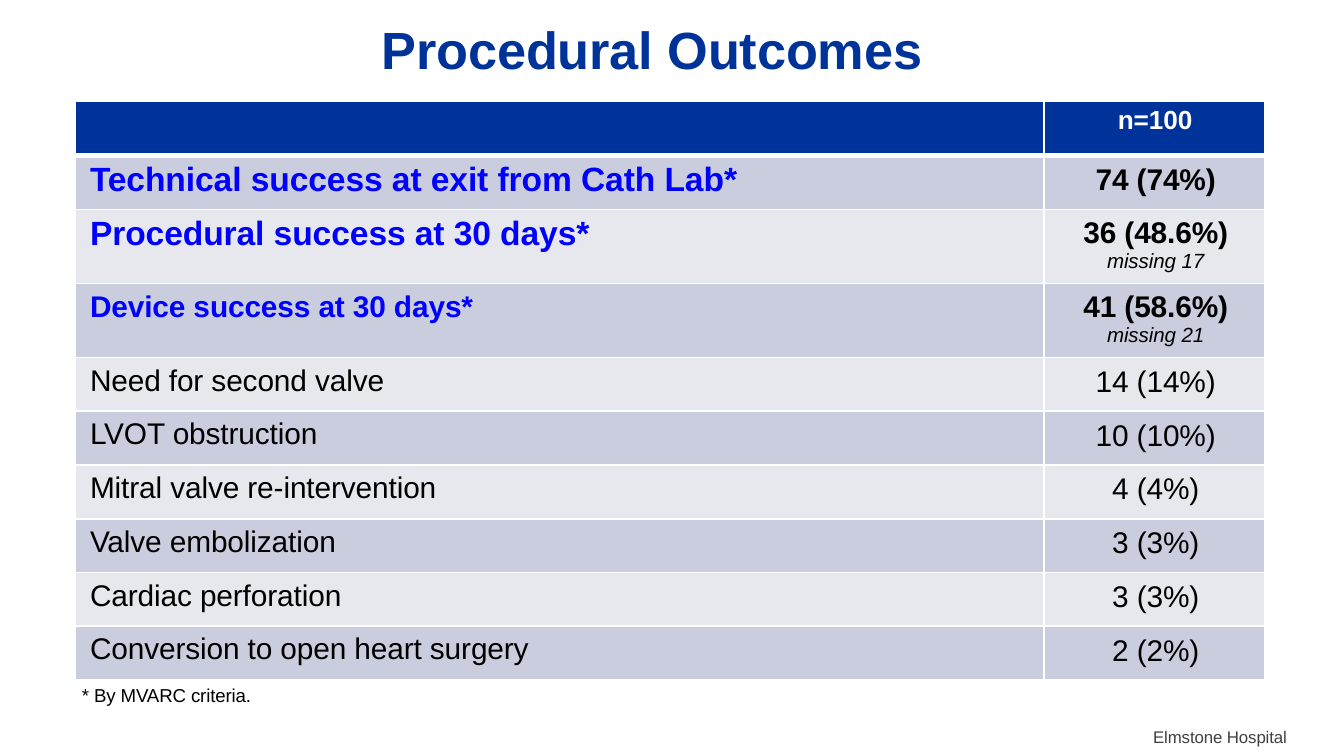
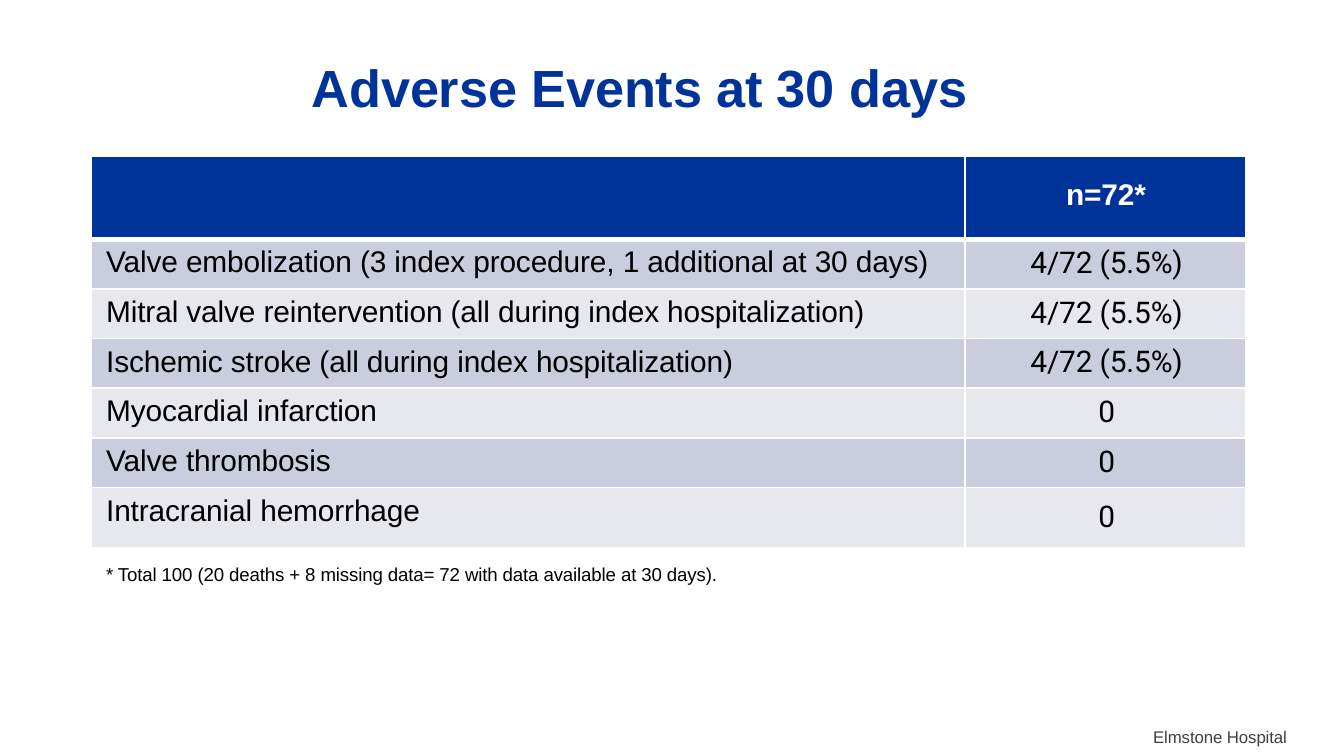
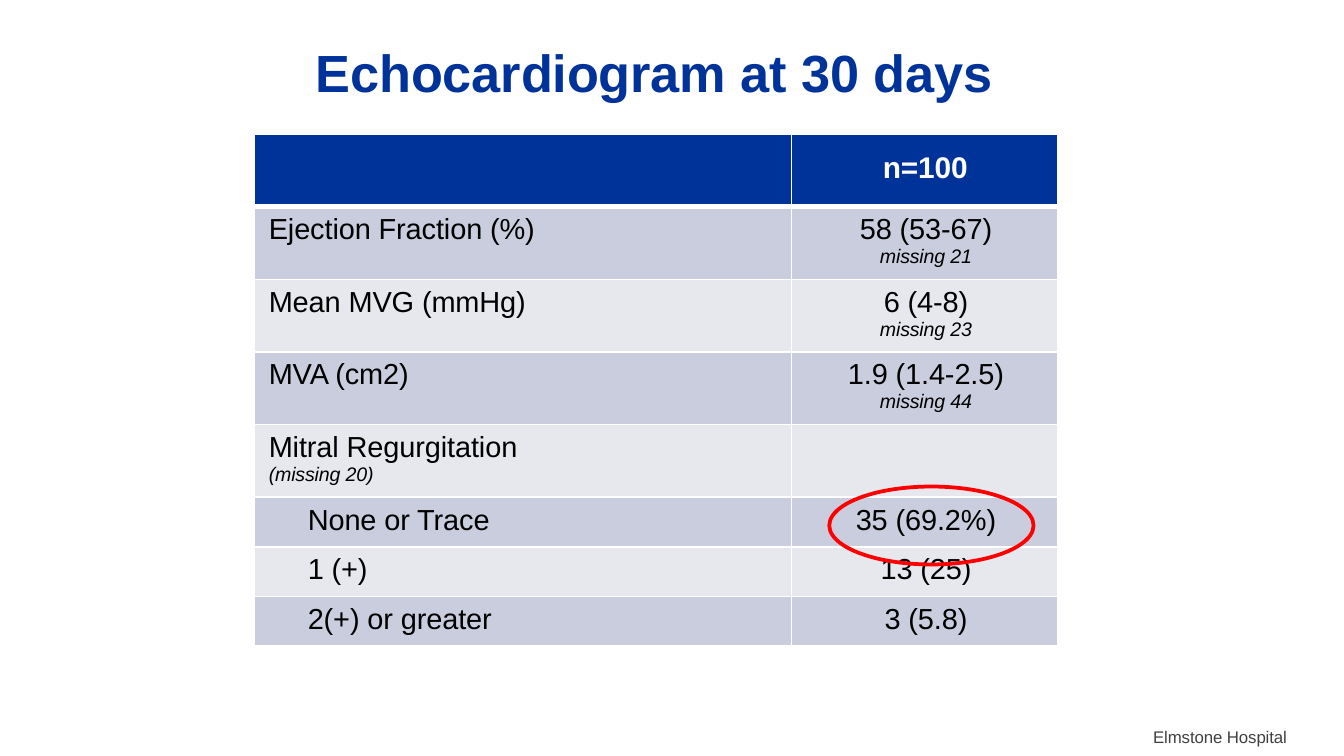
from dataclasses import dataclass

from lxml.etree import SubElement
from pptx import Presentation
from pptx.dml.color import RGBColor
from pptx.enum.shapes import MSO_SHAPE as Preset
from pptx.enum.text import MSO_ANCHOR as Anchor, MSO_AUTO_SIZE as AutoSize, PP_ALIGN as Align
from pptx.oxml.ns import qn
from pptx.util import Emu, Pt

EMU_PER_PX = 9144
SLIDE_WIDTH = 1000
NAVY = "003399"
BLUE = "0000FF"
BLACK = "000000"
WHITE = "FFFFFF"
GRAY = "404040"
RED = "FF0000"
BANDS = ["CACDDE", "E7E8EE"]
BODY_FONT = "Arial"
TRACKING = "-5"


@dataclass
class Row:
    height: int
    label: str
    value: str
    label_size: float = 16
    label_color: str = BLACK
    bold: bool = False
    indent: int = 11
    label_top: int = 5
    value_top: int = 5


@dataclass
class TableStyle:
    header_top: int
    header_size: float = 16
    value_size: float = 16
    note_size: float = 11
    value_font: str = BODY_FONT


def px(length):
    return Emu(length * EMU_PER_PX)


def color(value):
    return RGBColor.from_string(value)


def style_paragraph(paragraph, size, text_color, bold=False, italic=False, font=BODY_FONT, align=Align.LEFT):
    paragraph.alignment = align
    for run in paragraph.runs:
        run.font.name = font
        run.font.size = Pt(size)
        run.font.bold = bold
        run.font.italic = italic
        run.font.color.rgb = color(text_color)
        run._r.get_or_add_rPr().set("spc", TRACKING)


def fill_frame(text_frame, text, size, text_color, bold=False):
    text_frame.text = text
    text_frame.word_wrap = True
    text_frame.auto_size = AutoSize.NONE
    text_frame.vertical_anchor = Anchor.TOP
    text_frame.margin_right = text_frame.margin_bottom = 0
    text_frame.margin_left = text_frame.margin_top = px(1)
    style_paragraph(text_frame.paragraphs[0], size, text_color, bold)


def add_text(slide, left, top, width, height, text, size, text_color=BLACK):
    box = slide.shapes.add_textbox(px(left), px(top), px(width), px(height))
    fill_frame(box.text_frame, text, size, text_color)


def add_titled_slide(presentation, title, left, top, width):
    slide = presentation.slides.add_slide(presentation.slide_layouts[5])
    shape = slide.shapes.title
    shape.left, shape.top, shape.width, shape.height = px(left), px(top), px(width), px(49)
    fill_frame(shape.text_frame, title, 28, NAVY, bold=True)
    add_text(slide, 857, 540, 104, 17, "Elmstone Hospital", 9, GRAY)
    return slide


def set_borders(cell, row_index):
    properties = cell._tc.get_or_add_tcPr()
    widths = {
        "a:lnL": 1,
        "a:lnR": 1,
        "a:lnT": 3 if row_index == 1 else 1,
        "a:lnB": 3 if row_index == 0 else 1,
    }
    for position, (tag, width) in enumerate(widths.items()):
        line = SubElement(properties, qn(tag), w=str(Pt(width)))
        SubElement(SubElement(line, qn("a:solidFill")), qn("a:srgbClr"), val=WHITE)
        properties.insert(position, line)


def write_cell(cell, text, top, left, size, text_color, bold, note_size, font=BODY_FONT, align=Align.LEFT):
    cell.margin_left, cell.margin_top = px(left), px(top)
    cell.margin_right = cell.margin_bottom = 0
    cell.vertical_anchor = Anchor.TOP
    cell.text_frame.text = text
    main_line, *notes = cell.text_frame.paragraphs
    style_paragraph(main_line, size, text_color, bold, font=font, align=align)
    for note in notes:
        style_paragraph(note, note_size, BLACK, italic=True, align=align)


def add_outcome_table(slide, left, top, column_widths, header_height, header, rows, style):
    heights = [header_height] + [row.height for row in rows]
    table = slide.shapes.add_table(
        len(heights), 2, px(left), px(top), px(sum(column_widths)), px(sum(heights))
    ).table
    for column, width in zip(table.columns, column_widths):
        column.width = px(width)
    for index, height in enumerate(heights):
        table.rows[index].height = px(height)
        for cell in table.rows[index].cells:
            cell.fill.solid()
            cell.fill.fore_color.rgb = color(BANDS[(index - 1) % 2] if index else NAVY)
            set_borders(cell, index)
    write_cell(table.cell(0, 1), header, style.header_top, 1, style.header_size, WHITE, True,
               style.note_size, align=Align.CENTER)
    for index, row in enumerate(rows, 1):
        write_cell(table.cell(index, 0), row.label, row.label_top, row.indent, row.label_size,
                   row.label_color, row.bold, style.note_size)
        write_cell(table.cell(index, 1), row.value, row.value_top, 2, style.value_size, BLACK,
                   row.bold, style.note_size, style.value_font, Align.CENTER)


def add_highlight(slide, left, top, width, height):
    oval = slide.shapes.add_shape(Preset.OVAL, px(left), px(top), px(width), px(height))
    oval.shadow.inherit = False
    oval.fill.background()
    oval.line.color.rgb = color(RED)
    oval.line.width = Pt(2)


def add_procedural_outcomes(presentation):
    slide = add_titled_slide(presentation, "Procedural Outcomes", 283, 12, 407)
    successes = [
        Row(40, "Technical success at exit from Cath Lab*", "74 (74%)", 18, BLUE, True,
            label_top=4, value_top=6),
        Row(55, "Procedural success at 30 days*", "36 (48.6%)\nmissing 17", 18, BLUE, True, label_top=4),
        Row(55, "Device success at 30 days*", "41 (58.6%)\nmissing 21", 16, BLUE, True),
    ]
    complications = [
        ("Need for second valve", "14 (14%)"),
        ("LVOT obstruction", "10 (10%)"),
        ("Mitral valve re-intervention", "4 (4%)"),
        ("Valve embolization", "3 (3%)"),
        ("Cardiac perforation", "3 (3%)"),
        ("Conversion to open heart surgery", "2 (2%)"),
    ]
    rows = successes + [Row(40, label, value, value_top=6) for label, value in complications]
    add_outcome_table(slide, 56, 75, [721, 164], 41, "n=100", rows,
                      TableStyle(header_top=4, header_size=14))
    add_text(slide, 60, 508, 131, 19, "* By MVARC criteria.", 10)


def add_adverse_events(presentation):
    slide = add_titled_slide(presentation, "Adverse Events at 30 days", 231, 40, 493)
    events = [
        ("Valve embolization (3 index procedure, 1 additional at 30 days)", "4/72 (5.5%)"),
        ("Mitral valve reintervention (all during index hospitalization)", "4/72 (5.5%)"),
        ("Ischemic stroke (all during index hospitalization)", "4/72 (5.5%)"),
        ("Myocardial infarction", "0"),
        ("Valve thrombosis", "0"),
    ]
    rows = [Row(37, label, value) for label, value in events]
    rows.append(Row(45, "Intracranial hemorrhage", "0", value_top=9))
    add_outcome_table(slide, 68, 116, [650, 209], 62, "n=72*", rows,
                      TableStyle(header_top=17, value_font="Roboto"))
    add_text(slide, 78, 418, 463, 19,
             "* Total 100 (20 deaths + 8 missing data= 72 with data available at 30 days).", 10)


def add_echocardiogram(presentation):
    slide = add_titled_slide(presentation, "Echocardiogram at 30 days", 234, 29, 508)
    measures = [
        ("Ejection Fraction (%)", "58 (53-67)\nmissing 21"),
        ("Mean MVG (mmHg)", "6 (4-8)\nmissing 23"),
        ("MVA (cm2)", "1.9 (1.4-2.5)\nmissing 44"),
        ("Mitral Regurgitation\n(missing 20)", ""),
    ]
    grades = [
        ("None or Trace", "35 (69.2%)"),
        ("1 (+)", "13 (25)"),
        ("2(+) or greater", "3 (5.8)"),
    ]
    size = 15.5
    rows = [Row(54, label, value, size) for label, value in measures]
    rows += [Row(37, label, value, size, indent=40) for label, value in grades]
    add_outcome_table(slide, 189, 100, [400, 198], 54, "n=100", rows,
                      TableStyle(header_top=13, value_size=size, note_size=10.5))
    add_highlight(slide, 617, 362, 152, 58)


def main():
    presentation = Presentation()
    presentation.slide_width = px(SLIDE_WIDTH)
    presentation.slide_height = px(SLIDE_WIDTH) * 9 // 16
    add_procedural_outcomes(presentation)
    add_adverse_events(presentation)
    add_echocardiogram(presentation)
    presentation.save("out.pptx")


if __name__ == "__main__":
    main()
